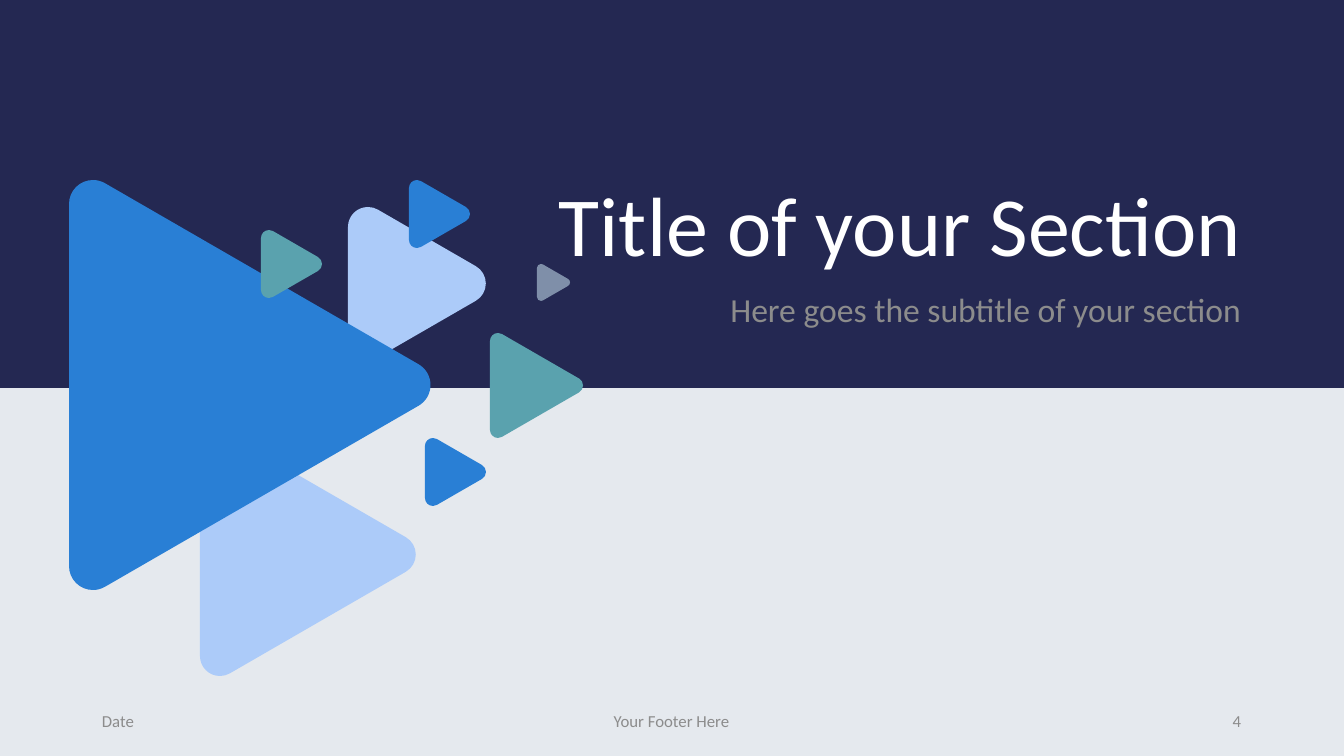
from dataclasses import dataclass
from math import cos, radians, sin, sqrt, tan

from lxml.etree import SubElement
from pptx import Presentation
from pptx.dml.color import RGBColor
from pptx.enum.shapes import MSO_SHAPE as Preset
from pptx.enum.text import MSO_ANCHOR as Anchor, PP_ALIGN as Align
from pptx.oxml.ns import qn
from pptx.util import Emu, Pt

PX_PER_INCH = 100.8


@dataclass(frozen=True)
class Theme:
    """Colours, font and type sizes of the slide."""
    paper: str = "E5E9EE"
    navy: str = "242852"
    white: str = "FFFFFF"
    muted: str = "8C8C8C"
    blue: str = "297FD5"
    sky: str = "ACCBF9"
    teal: str = "5AA2AE"
    slate: str = "7F8FA9"
    font: str = "Calibri"
    title: int = 60
    subtitle: int = 24
    footer: int = 12


THEME = Theme()


def px(length):
    """Turn a length in px into EMU."""
    return Emu(round(length * 914400 / PX_PER_INCH))


def paint(shape, color):
    """Give a shape a flat fill with no line or shadow."""
    shape.fill.solid()
    shape.fill.fore_color.rgb = RGBColor.from_string(color)
    shape.line.fill.background()
    shape.shadow.inherit = False


def write(slide, box, text, size, color, align, anchor, spacing=1.0):
    """Place one line of text in a box."""
    frame = slide.shapes.add_textbox(*map(px, box)).text_frame
    frame.word_wrap = True
    frame.vertical_anchor = anchor
    paragraph = frame.paragraphs[0]
    paragraph.alignment = align
    paragraph.line_spacing = spacing
    run = paragraph.add_run()
    run.text = text
    run.font.name = THEME.font
    run.font.size = Pt(size)
    run.font.color.rgb = RGBColor.from_string(color)


def draw_band(slide, box):
    """Fill the upper part of the slide."""
    paint(slide.shapes.add_shape(Preset.RECTANGLE, *map(px, box)), THEME.navy)


def draw_heading(slide, box):
    """Set the section title above its subtitle, both against the right edge."""
    left, top, width, height = box
    write(slide, (left, top, width, 232), "Title of your Section",
          THEME.title, THEME.white, Align.RIGHT, Anchor.BOTTOM, 0.9)
    write(slide, (left + 61, top + 241, width - 61, height - 241),
          "Here goes the subtitle of your section",
          THEME.subtitle, THEME.muted, Align.RIGHT, Anchor.TOP, 0.9)


def draw_footer(slide, box):
    """Set the date, footer and slide number at left, centre and right."""
    left, top, width, height = box
    entries = (
        ("Date", 0, 302, Align.LEFT),
        ("Your Footer Here", (width - 454) / 2, 454, Align.CENTER),
        ("4", width - 302, 302, Align.RIGHT),
    )
    for text, offset, entry_width, align in entries:
        write(slide, (left + offset, top, entry_width, height), text,
              THEME.footer, THEME.muted, align, Anchor.MIDDLE)


def arc_points(x, y, radius, start, end):
    """Return the two ends of an arc with its two Bézier handles between."""
    first, last = radians(start), radians(end)
    reach = 4 / 3 * tan((last - first) / 4)
    steps = ((first, 0), (first, reach), (last, -reach), (last, 0))
    return [
        (px(x + radius * (cos(angle) - pull * sin(angle))),
         px(y + radius * (sin(angle) + pull * cos(angle))))
        for angle, pull in steps
    ]


def bend(segments):
    """Merge three straight segments into one curve."""
    curve = segments[0].getparent()
    curve = SubElement(curve, qn("a:cubicBezTo"))
    segments[0].addprevious(curve)
    for segment in segments:
        curve.append(segment[0])
        segment.getparent().remove(segment)


def draw_triangle(cluster, left, top, height, radius, color):
    """Draw an equilateral triangle with round corners, pointing right."""
    side = height - 2 * radius
    near, upper = left + radius, top + radius
    tip, middle, lower = near + side * sqrt(3) / 2, upper + side / 2, upper + side
    arcs = (
        (near, upper, 180, 270), (near, upper, 270, 300),
        (tip, middle, 300, 360), (tip, middle, 0, 60),
        (near, lower, 60, 90), (near, lower, 90, 180),
    )
    outline, curve_starts = [], []
    for x, y, start, end in arcs:
        points = arc_points(x, y, radius, start, end)
        if outline and outline[-1] == points[0]:
            points = points[1:]
        outline += points
        curve_starts.append(len(outline) - 4)
    builder = cluster.shapes.build_freeform(*outline[0])
    builder.add_line_segments(outline[1:], close=True)
    triangle = builder.convert_to_shape()
    segments = list(triangle.element.iter(qn("a:lnTo")))
    for start in curve_starts:
        bend(segments[start:start + 3])
    paint(triangle, color)


def draw_cluster(slide, box):
    """Scatter the triangles, from back to front."""
    left, top = box[:2]
    cluster = slide.shapes.add_group_shape()
    triangles = (
        (131, 253, 243, 20, THEME.sky),
        (279, 27, 153, 20, THEME.sky),
        (356, 258, 68, 8, THEME.blue),
        (340, 0, 68, 8, THEME.blue),
        (468, 84, 37, 4, THEME.slate),
        (421, 153, 105, 8, THEME.teal),
        (0, 0, 410, 24, THEME.blue),
        (192, 50, 68, 8, THEME.teal),
    )
    for x, y, height, radius, color in triangles:
        draw_triangle(cluster, left + x, top + y, height, radius, color)


def draw_section_slide(deck, box):
    """Build the section slide."""
    left, top, width, height = box
    slide = deck.slides.add_slide(deck.slide_layouts[6])
    slide.background.fill.solid()
    slide.background.fill.fore_color.rgb = RGBColor.from_string(THEME.paper)
    draw_band(slide, (left, top, width, 388))
    draw_heading(slide, (left + 420, top + 48, 831, 323))
    draw_footer(slide, (left + 92, top + height - 55, width - 185, 40))
    draw_cluster(slide, (left + 69, top + 180, 514, 496))


def main():
    """Create the deck and save it."""
    deck = Presentation()
    deck.slide_width, deck.slide_height = px(1344), px(756)
    draw_section_slide(deck, (0, 0, 1344, 756))
    deck.save("out.pptx")


if __name__ == "__main__":
    main()
